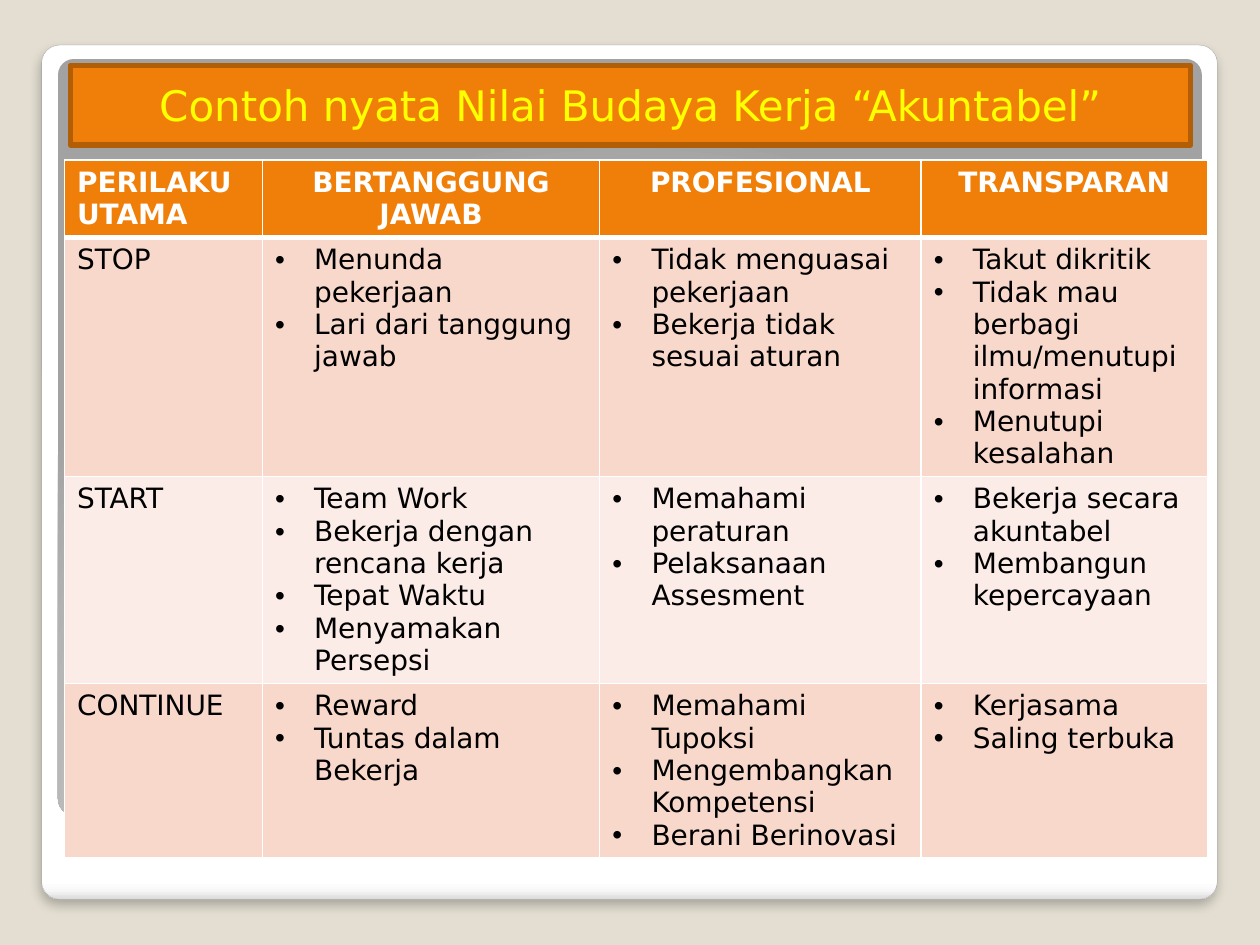
import pptx
import pptx.util
import pptx.dml.color
import pptx.enum.shapes
import pptx.enum.text
import pptx.oxml
import pptx.oxml.ns
from pptx.util import Cm

FONT = "DejaVu Sans"
COLORS = {
    "background": "E3DED1", "orange": "F07F09", "brown": "B25E07",
    "yellow": "FFFF00", "white": "FFFFFF", "black": "000000",
    "card_line": "A4A4A4", "band_dark": "F9D8CC", "band_light": "FCECE7",
}
CARD_STOPS = [(0, "FFFFFF"), (98, "FFFFFF"), (99, "F7F7F7"), (100, "DADADA")]
PANEL_STOPS = [(0, "FFFFFF"), (55, "E1E1E1"), (100, "A2A2A2")]
LINEAR = '<a:lin ang="5400000" scaled="0"/>'
RADIAL = ('<a:path path="circle"><a:fillToRect l="50000" t="175000" '
          'r="50000" b="-75000"/></a:path>')
COL_WIDTHS = [3.99, 6.8, 6.48, 5.77]
ROW_HEIGHTS = [1.54, 4.82, 4.17, 3.5]
HEADERS = ["PERILAKU UTAMA", "BERTANGGUNG JAWAB", "PROFESIONAL", "TRANSPARAN"]
ROWS = [
    ("STOP",
     ["Menunda pekerjaan", "Lari dari tanggung jawab"],
     ["Tidak menguasai pekerjaan", "Bekerja tidak sesuai aturan"],
     ["Takut dikritik", "Tidak mau berbagi ilmu/menutupi informasi",
      "Menutupi kesalahan"]),
    ("START",
     ["Team Work", "Bekerja dengan rencana kerja", "Tepat Waktu",
      "Menyamakan Persepsi"],
     ["Memahami peraturan", "Pelaksanaan Assesment"],
     ["Bekerja secara akuntabel", "Membangun kepercayaan"]),
    ("CONTINUE",
     ["Reward", "Tuntas dalam Bekerja"],
     ["Memahami Tupoksi", "Mengembangkan Kompetensi", "Berani Berinovasi"],
     ["Kerjasama", "Saling terbuka"]),
]


def rgb(name):
    """Return the named colour."""
    return pptx.dml.color.RGBColor.from_string(COLORS[name])


def element(xml):
    """Parse a drawing element whose root has the a: prefix."""
    tag, rest = xml[1:].split(" ", 1)
    return pptx.oxml.parse_xml(f"<{tag} {pptx.oxml.ns.nsdecls('a')} {rest}")


def write(tf, text, size=16, color="black", bold=False, center=False, bullet=False, first=True):
    """Write one formatted paragraph into a text frame."""
    p = tf.paragraphs[0] if first else tf.add_paragraph()
    align = pptx.enum.text.PP_ALIGN
    p.alignment = align.CENTER if center else align.LEFT
    if bullet:
        pPr = p._p.get_or_add_pPr()
        pPr.set("marL", str(Cm(0.79)))
        pPr.set("indent", str(-Cm(0.79)))
        pPr.append(element('<a:buFont typeface="Arial"/>'))
        pPr.append(element('<a:buChar char="•"/>'))
    r = p.add_run()
    r.text = text
    r.font.name, r.font.size, r.font.bold = FONT, pptx.util.Pt(size), bold
    r.font.color.rgb = rgb(color)


def add_panel(s, left, top, width, height, stops, direction):
    """Add a rounded panel with a gradient fill and no line."""
    sp = s.shapes.add_shape(pptx.enum.shapes.MSO_SHAPE.ROUNDED_RECTANGLE,
                            Cm(left), Cm(top), Cm(width), Cm(height))
    sp.adjustments[0] = 0.021
    sp.shadow.inherit = False
    sp.line.fill.background()
    marks = "".join(f'<a:gs pos="{pos * 1000}"><a:srgbClr val="{color}"/></a:gs>'
                    for pos, color in stops)
    sp._element.spPr.insert(2, element(
        f'<a:gradFill rotWithShape="1"><a:gsLst>{marks}</a:gsLst>{direction}</a:gradFill>'))
    return sp


def add_card(s):
    """Add the white card with its thin outline and soft shadow."""
    sp = add_panel(s, 0.84, 0.91, 23.7, 17.22, CARD_STOPS, LINEAR)
    sp.line.color.rgb = rgb("card_line")
    sp.line.width = pptx.util.Pt(0.16)
    effects = sp._element.spPr.find(pptx.oxml.ns.qn("a:effectLst"))
    effects.append(element(
        '<a:outerShdw blurRad="76200" dist="50800" dir="5400000" algn="tl" rotWithShape="0">'
        f'<a:srgbClr val="{COLORS["black"]}"><a:alpha val="25000"/></a:srgbClr></a:outerShdw>'))


def style_cell(cell, fill, bottom=1, top=1):
    """Give a cell white borders and a solid fill."""
    tcPr = cell._tc.get_or_add_tcPr()
    for side, width in (("L", 1), ("R", 1), ("T", top), ("B", bottom)):
        tcPr.append(element(
            f'<a:ln{side} w="{pptx.util.Pt(width)}"><a:solidFill>'
            f'<a:srgbClr val="{COLORS["white"]}"/></a:solidFill></a:ln{side}>'))
    cell.fill.solid()
    cell.fill.fore_color.rgb = rgb(fill)


def add_behaviour_table(s):
    """Add the table of behaviours by value."""
    table = s.shapes.add_table(len(ROW_HEIGHTS), len(COL_WIDTHS), Cm(1.3), Cm(3.23),
                               Cm(sum(COL_WIDTHS)), Cm(sum(ROW_HEIGHTS))).table
    for col, width in zip(table.columns, COL_WIDTHS):
        col.width = Cm(width)
    for row, height in zip(table.rows, ROW_HEIGHTS):
        row.height = Cm(height)
    for c, text in enumerate(HEADERS):
        cell = table.cell(0, c)
        style_cell(cell, "orange", bottom=3)
        write(cell.text_frame, text, color="white", bold=True, center=c > 0)
    for i, (label, *lists) in enumerate(ROWS, 1):
        for c, items in enumerate([[label], *lists]):
            cell = table.cell(i, c)
            style_cell(cell, "band_dark" if i % 2 else "band_light", top=3 if i == 1 else 1)
            for n, text in enumerate(items):
                write(cell.text_frame, text, bullet=c > 0, first=n == 0)


def add_title(s, text):
    """Format the title as an orange banner in front of the panels."""
    sp = s.shapes.title
    sp.left, sp.top, sp.width, sp.height = Cm(1.42), Cm(1.32), Cm(22.58), Cm(1.6)
    sp.fill.solid()
    sp.fill.fore_color.rgb = rgb("orange")
    sp.line.color.rgb = rgb("brown")
    sp.line.width = pptx.util.Pt(3.35)
    tf = sp.text_frame
    tf.word_wrap = True
    tf.auto_size = pptx.enum.text.MSO_AUTO_SIZE.NONE
    tf.vertical_anchor = pptx.enum.text.MSO_ANCHOR.MIDDLE
    write(tf, text, size=24, color="yellow", center=True)
    s.shapes._spTree.append(sp._element)


def main():
    """Build and save the slide."""
    prs = pptx.Presentation()
    prs.slide_width, prs.slide_height = Cm(25.4), Cm(19.05)
    s = prs.slides.add_slide(prs.slide_layouts[5])
    s.background.fill.solid()
    s.background.fill.fore_color.rgb = rgb("background")
    add_card(s)
    add_panel(s, 1.17, 1.19, 23.06, 15.24, PANEL_STOPS, RADIAL)
    add_behaviour_table(s)
    add_title(s, "Contoh nyata Nilai Budaya Kerja “Akuntabel”")
    prs.save("out.pptx")


if __name__ == "__main__":
    main()
